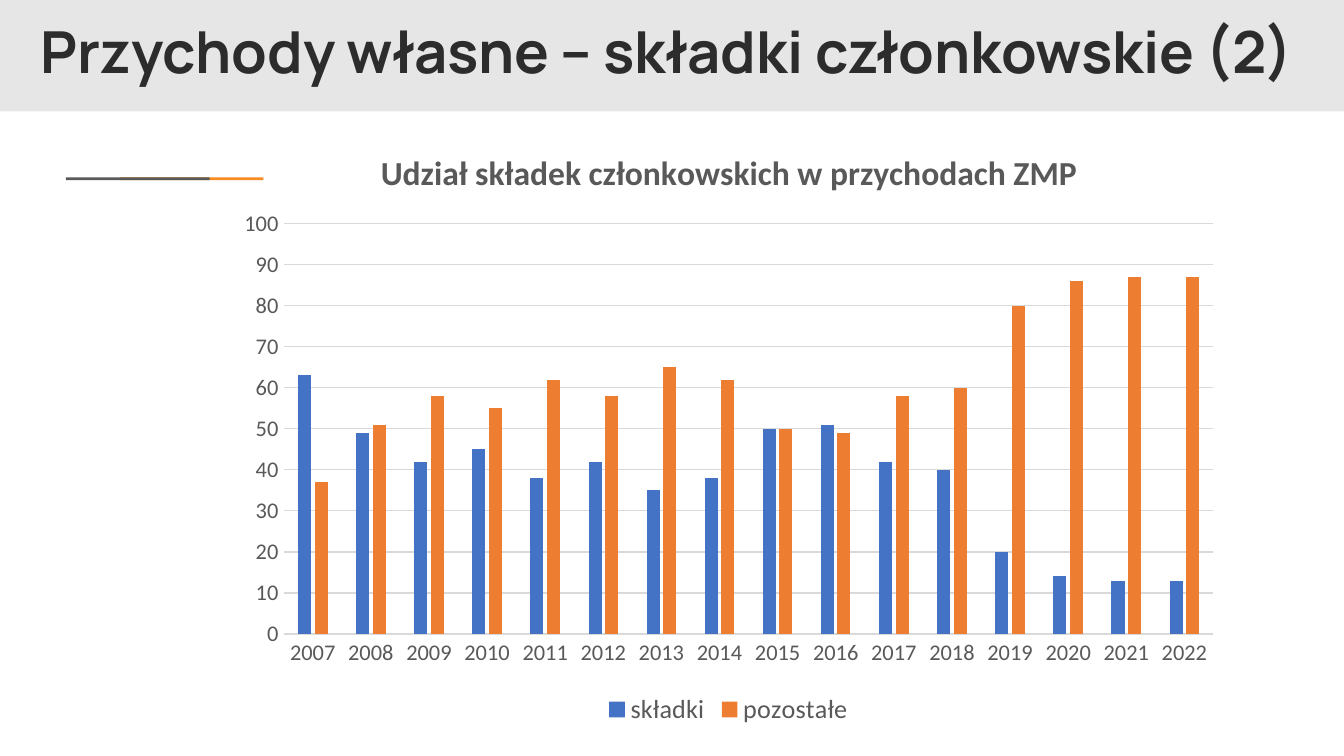
from lxml import etree
from pptx import Presentation
from pptx.chart.data import CategoryChartData
from pptx.dml.color import RGBColor
from pptx.enum.chart import XL_CHART_TYPE, XL_LEGEND_POSITION, XL_TICK_MARK
from pptx.enum.shapes import MSO_SHAPE
from pptx.enum.text import MSO_ANCHOR, MSO_AUTO_SIZE, PP_ALIGN
from pptx.oxml.ns import qn
from pptx.util import Inches, Pt

RECTANGLE = MSO_SHAPE.RECTANGLE
COLUMNS = XL_CHART_TYPE.COLUMN_CLUSTERED
BOTTOM = XL_LEGEND_POSITION.BOTTOM
NO_TICKS = XL_TICK_MARK.NONE
MIDDLE = MSO_ANCHOR.MIDDLE
NO_FIT = MSO_AUTO_SIZE.NONE
CENTER = PP_ALIGN.CENTER

WIDTH = 10
HEIGHT = WIDTH * 9 / 16
BAND_HEIGHT = 0.83
TEXT_GRAY, LINE_GRAY = "595959", "D9D9D9"
YEARS = range(2007, 2023)
SERIES = [
    ("składki", "4472C4",
     [63, 49, 42, 45, 38, 42, 35, 38, 50, 51, 42, 40, 20, 14, 13, 13]),
    ("pozostałe", "ED7D31",
     [37, 51, 58, 55, 62, 58, 65, 62, 50, 49, 58, 60, 80, 86, 87, 87]),
]


def color(value):
    return RGBColor.from_string(value)


def box(left, top, width, height):
    return [Inches(length) for length in (left, top, width, height)]


def style_font(font, size, value, name="Calibri", bold=False):
    font.size, font.name, font.bold = Pt(size), name, bold
    font.color.rgb = color(value)


def style_line(line, value):
    line.color.rgb = color(value)
    line.width = Pt(0.75)


def add_bar(slide, left, top, width, height, fill):
    shape = slide.shapes.add_shape(RECTANGLE, *box(left, top, width, height))
    shape.shadow.inherit = False
    shape.fill.solid()
    shape.fill.fore_color.rgb = color(fill)
    shape.line.fill.background()


def set_title(slide, text):
    title = slide.shapes.title
    title.left, title.top, title.width, title.height = box(0, 0, 9.92, 0.82)
    frame = title.text_frame
    frame.word_wrap, frame.auto_size = True, NO_FIT
    frame.vertical_anchor = MIDDLE
    paragraph = frame.paragraphs[0]
    paragraph.alignment, paragraph.line_spacing = CENTER, 0.9
    run = paragraph.add_run()
    run.text = text
    style_font(run.font, 31, "2C2C2C", "Manrope", True)


def place(parent, index, **settings):
    """Give a chart part a manual layout, in shares of the chart's size."""
    for old in parent.findall(qn("c:layout")):
        parent.remove(old)
    layout = etree.Element(qn("c:layout"))
    manual = etree.SubElement(layout, qn("c:manualLayout"))
    for tag, value in settings.items():
        etree.SubElement(manual, qn("c:" + tag)).set("val", str(value))
    parent.insert(index, layout)


def style_axis(axis):
    axis.major_tick_mark = axis.minor_tick_mark = NO_TICKS
    style_font(axis.tick_labels.font, 12, TEXT_GRAY)


def add_chart(slide, title):
    data = CategoryChartData()
    data.categories = [str(year) for year in YEARS]
    for name, _, values in SERIES:
        data.add_series(name, values)
    frame = slide.shapes.add_chart(COLUMNS, *box(1.66, 0.93, 7.52, 4.51), data)
    chart = frame.chart
    style_font(chart.font, 10, "000000")

    # Columns
    plot = chart.plots[0]
    plot.gap_width, plot.overlap = 219, -27
    plot.vary_by_categories = False
    for series, (_, fill, _) in zip(plot.series, SERIES):
        series.format.fill.solid()
        series.format.fill.fore_color.rgb = color(fill)

    # Axes
    style_axis(chart.category_axis)
    style_line(chart.category_axis.format.line, LINE_GRAY)
    values = chart.value_axis
    style_axis(values)
    values.minimum_scale, values.maximum_scale, values.major_unit = 0, 100, 10
    values.format.line.fill.background()
    values.has_major_gridlines = True
    style_line(values.major_gridlines.format.line, LINE_GRAY)

    # Legend and title
    chart.has_legend = True
    chart.legend.position = BOTTOM
    chart.legend.include_in_layout = False
    style_font(chart.legend.font, 14, TEXT_GRAY)
    chart.has_title = True
    run = chart.chart_title.text_frame.paragraphs[0].add_run()
    run.text = title
    style_font(run.font, 18, TEXT_GRAY, bold=True)

    # Places of the title and the plot
    chart_element = chart.element.find(qn("c:chart"))
    place(chart_element.find(qn("c:title")), 1,
          xMode="edge", yMode="edge", x=0.15, y=0.03)
    place(chart_element.find(qn("c:plotArea")), 0, layoutTarget="inner",
          xMode="edge", yMode="edge", x=0.06, y=0.163, w=0.92, h=0.677)


def main():
    presentation = Presentation()
    presentation.slide_width = Inches(WIDTH)
    presentation.slide_height = Inches(HEIGHT)
    slide = presentation.slides.add_slide(presentation.slide_layouts[5])

    # Title band, drawn behind the title
    add_bar(slide, 0, 0, WIDTH, BAND_HEIGHT, "E7E6E6")
    title = slide.shapes.title.element
    title.getparent().append(title)
    set_title(slide, "Przychody własne – składki członkowskie (2)")

    # Two overlapping accent bars
    for left, fill in ((0.89, "F68B1F"), (0.49, "58595B")):
        add_bar(slide, left, 1.32, 1.07, 0.02, fill)

    add_chart(slide, "Udział składek członkowskich w przychodach ZMP")
    presentation.save("out.pptx")


if __name__ == "__main__":
    main()
